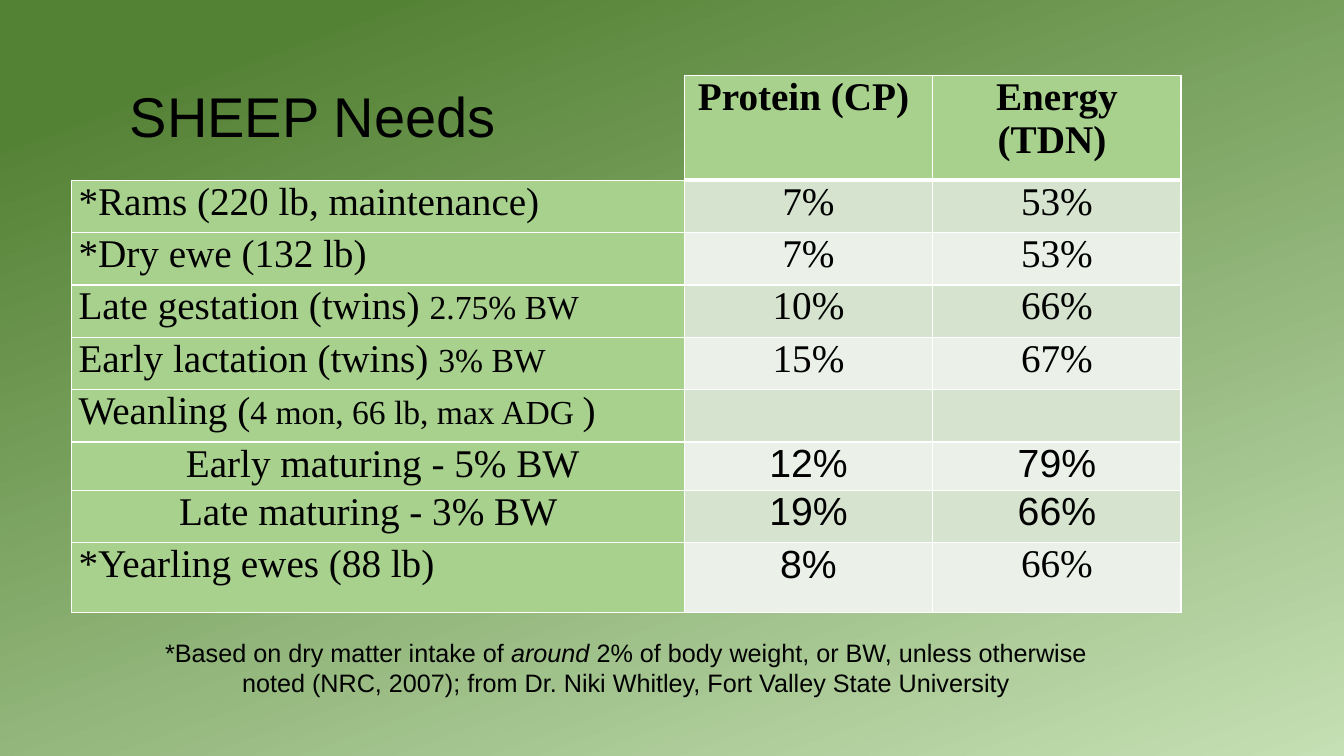
import pptx
import pptx.util
import pptx.dml.color
import pptx.enum.text
import pptx.oxml

Cm, Pt = pptx.util.Cm, pptx.util.Pt
align = pptx.enum.text.PP_ALIGN
mid = pptx.enum.text.MSO_ANCHOR.MIDDLE
serif, sans = "Times New Roman", "Arial"


def paint(fill, shade):
    fill.solid()
    fill.fore_color.rgb = pptx.dml.color.RGBColor.from_string(shade)


def write(para, text, **form):
    run = para.add_run()
    run.text = text
    for key, val in form.items():
        setattr(run.font, key, val)
    paint(run.font.fill, "000000")


deck = pptx.Presentation()
deck.slide_width, deck.slide_height = Cm(33.87), Cm(19.05)
slide = deck.slides.add_slide(deck.slide_layouts[5])

# Green gradient ground
ground = slide.background.fill
ground.gradient()
ground.gradient_angle = 290
for stop, (place, shade) in zip(ground.gradient_stops, [(0.11, "548235"), (1, "C5E0B4")]):
    stop.position = place
    stop.color.rgb = pptx.dml.color.RGBColor.from_string(shade)

# Table of needs: label parts with sizes, protein, energy, font of each value
needs = [
    ([], "Protein (CP) ", "Energy (TDN) ", serif, serif),
    ([("*Rams (220 lb, maintenance)", 28)], "7%", "53%", serif, serif),
    ([("*Dry ewe (132 lb)", 28)], "7%", "53%", serif, serif),
    ([("Late gestation (twins) ", 28), ("2.75% BW", 24)], "10%", "66%", serif, serif),
    ([("Early lactation (twins) ", 28), ("3% BW", 24)], "15%", "67%", serif, serif),
    ([("Weanling (", 28), ("4 mon, 66 lb, max ADG ", 24), (")", 28)], "", "", serif, serif),
    ([("Early maturing - 5% BW", 28)], "12%", "79%", sans, sans),
    ([("Late maturing - 3% BW", 28)], "19%", "66%", sans, sans),
    ([("*Yearling ewes (88 lb)", 28)], "8%", "66%", sans, serif),
]
wides = [15.44, 6.27, 6.25]
highs = [2.64] + [1.32] * 5 + [1.22, 1.32, 1.75]
frame = slide.shapes.add_table(len(highs), len(wides), Cm(1.8), Cm(1.9),
                               Cm(sum(wides)), Cm(sum(highs)))
table = frame.table
table.first_row = table.horz_banding = False
for col, wide in zip(table.columns, wides):
    col.width = Cm(wide)
for row, high in zip(table.rows, highs):
    row.height = Cm(high)

# Extra side margin shifts the two centred sub-labels
shifts = {6: {"margin_left": Cm(0.43)}, 7: {"margin_right": Cm(0.66)}}
space = "http://schemas.openxmlformats.org/drawingml/2006/main"

for r, (label, protein, energy, *fonts) in enumerate(needs):
    for c in range(3):
        cell = table.cell(r, c)
        form = {"margin_left": Cm(0.18), "margin_right": Cm(0.18),
                "margin_top": 0, "margin_bottom": 0}
        if c == 0:
            form.update(shifts.get(r, {}))
        for key, val in form.items():
            setattr(cell, key, val)
        para = cell.text_frame.paragraphs[0]
        para.alignment = align.CENTER if c or r in shifts else align.LEFT
        para.font.size = Pt(28)
        if c == 0:
            parts = [(text, size, serif) for text, size in label]
        else:
            parts = [((protein, energy)[c - 1], 28, fonts[c - 1])]
        for text, size, font in parts:
            if text:
                write(para, text, size=Pt(size), name=font, bold=r == 0)

        # Cell fill
        blank = r == 0 and c == 0
        if blank:
            cell.fill.background()
        else:
            paint(cell.fill, "A9D18E" if r == 0 or c == 0 else ("EBF1E9", "D5E3CF")[r % 2])

        # White cell borders, thick below the heads
        props = cell._tc.get_or_add_tcPr()
        for i, side in enumerate("LRTB"):
            heavy = c > 0 and (r == 0 and side == "B" or r == 1 and side == "T")
            ink = '<a:solidFill><a:srgbClr val="FFFFFF"/></a:solidFill>'
            if blank and side in "LT":
                ink = "<a:noFill/>"
            props.insert(i, pptx.oxml.parse_xml(
                f'<a:ln{side} xmlns:a="{space}" w="{Pt(3 if heavy else 1)}">{ink}</a:ln{side}>'))

# Title
title = slide.shapes.title
for key, val in {"left": 3.02, "top": 1.42, "width": 11.38, "height": 3.18}.items():
    setattr(title, key, Cm(val))
title.text_frame.vertical_anchor = mid
title.text_frame.word_wrap = True
para = title.text_frame.paragraphs[0]
para.alignment, para.line_spacing = align.LEFT, 0.9
write(para, "SHEEP Needs", size=Pt(40), name=sans)

# Footnote
note = slide.shapes.add_textbox(Cm(3.61), Cm(15.93), Cm(24.33), Cm(1.8))
note.text_frame.word_wrap = True
para = note.text_frame.paragraphs[0]
para.alignment = align.CENTER
for text, slant in [
    ("*Based on dry matter intake of ", False),
    ("around", True),
    (" 2% of body weight, or BW, unless otherwise noted (NRC, 2007); "
     "from Dr. Niki Whitley, Fort Valley State University", False),
]:
    write(para, text, size=Pt(18), name=sans, italic=slant)

deck.save("out.pptx")
